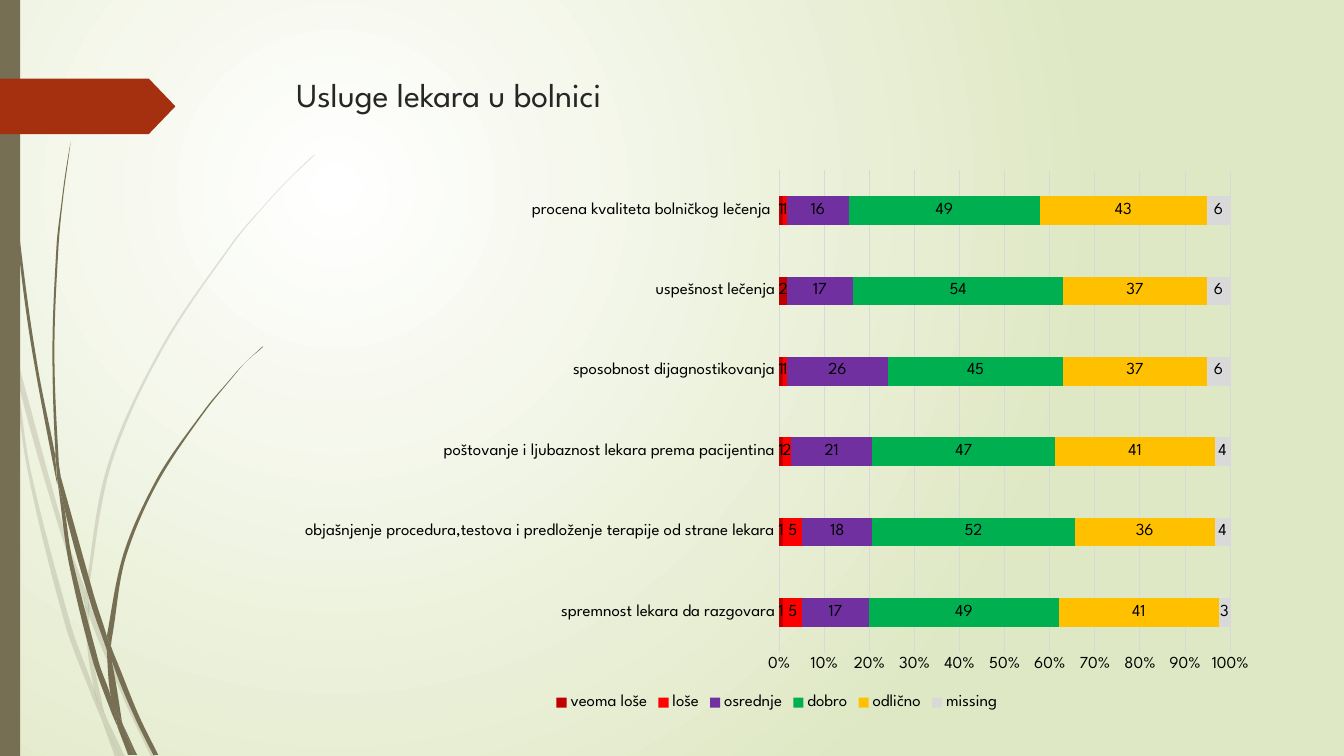
from dataclasses import dataclass
from typing import Any

from lxml import etree
from pptx import Presentation
from pptx import util as u
from pptx.chart.data import CategoryChartData
from pptx.dml.color import RGBColor
from pptx.enum import chart as ch, shapes, text
from pptx.oxml.ns import qn

PX = 9144  # one px is a hundredth of an inch
FONT = "League Spartan"
COLORS = {
    "white": "FFFFFF", "pale green": "DFE8C4", "bark": "766F54", "rust": "A53010",
    "title": "262626", "text": "000000", "grid": "D9D9D9",
}
Point = tuple[int, int]


@dataclass
class Blade:
    """A curved piece of grass, both edges running from top to bottom."""
    left: list[Point]
    right: list[Point]


@dataclass
class Answer:
    name: str
    color: str
    counts: list[int | None]


FAINT_GRASS = [
    Blade([(0, 299), (10, 344), (11, 350)], [(0, 282), (9, 322), (11, 350)]),
    Blade([(14, 345), (17, 376), (58, 522), (84, 599)], [(14, 345), (62, 520), (85, 586)]),
    Blade([(88, 596), (88, 610), (123, 694), (150, 751)],
          [(88, 596), (92, 607), (127, 692), (155, 751)]),
    Blade([(105, 711), (119, 751)], [(105, 711), (124, 751)]),
    Blade([(11, 350), (28, 470), (65, 621), (92, 693), (101, 714)],
          [(11, 350), (17, 376), (31, 469), (70, 619), (93, 683), (99, 707), (101, 714)]),
    Blade([(84, 599), (87, 646), (93, 683), (96, 692), (105, 711)],
          [(84, 599), (88, 608), (88, 610), (91, 646), (103, 706), (105, 711)]),
    Blade([(312, 153), (289, 175), (268, 197), (228, 244), (158, 348), (107, 461),
           (85, 584), (85, 586)],
          [(312, 154), (290, 175), (268, 198), (229, 245), (160, 349), (110, 462),
           (88, 584), (88, 596)]),
    Blade([(101, 714), (114, 751)], [(101, 714), (119, 751)]),
    Blade([(85, 586), (84, 599), (88, 608)], [(85, 586), (88, 596), (88, 610)]),
    Blade([(93, 683), (99, 707), (101, 714), (119, 751)],
          [(93, 683), (96, 692), (105, 711), (119, 751)]),
]
DARK_GRASS = [
    Blade([(3, 0), (4, 48), (7, 110), (17, 233), (33, 355), (56, 477), (57, 481)],
          [(4, 0), (5, 48), (8, 109), (19, 232), (36, 355), (55, 453), (55, 457), (57, 481)]),
    Blade([(60, 472), (64, 505), (88, 592), (106, 645)], [(60, 472), (93, 590), (106, 631)]),
    Blade([(110, 641), (111, 656), (132, 708), (152, 749)],
          [(110, 641), (113, 649), (136, 706), (157, 749)]),
    Blade([(57, 477), (68, 557), (93, 659), (111, 708), (117, 722)],
          [(57, 477), (64, 505), (72, 556), (98, 657), (110, 691), (116, 717), (117, 722)]),
    Blade([(70, 141), (62, 193), (56, 245), (52, 349), (55, 449), (60, 472)],
          [(70, 141), (63, 193), (58, 245), (54, 349), (58, 453), (60, 472)]),
    Blade([(122, 719), (133, 749)], [(122, 719), (136, 749)]),
    Blade([(55, 449), (55, 453), (57, 477), (64, 505)], [(55, 449), (60, 472), (64, 505)]),
    Blade([(260, 344), (245, 358), (231, 373), (204, 405), (156, 474), (122, 551), (106, 631)],
          [(261, 344), (245, 358), (231, 374), (205, 406), (158, 476), (125, 552),
           (111, 633), (110, 641)]),
    Blade([(117, 722), (127, 749)], [(117, 722), (131, 749)]),
    Blade([(106, 645), (110, 691), (116, 706), (122, 719)],
          [(106, 645), (109, 651), (111, 656), (121, 716), (122, 719)]),
    Blade([(106, 631), (106, 645)], [(106, 631), (110, 641), (111, 656)]),
    Blade([(110, 691), (116, 717), (117, 722), (130, 749)],
          [(110, 691), (116, 706), (122, 719), (133, 749)]),
]

QUESTIONS = [
    "spremnost lekara da razgovara",
    "objašnjenje procedura,testova i predloženje terapije od strane lekara",
    "poštovanje i ljubaznost lekara prema pacijentina",
    "sposobnost dijagnostikovanja",
    "uspešnost lečenja",
    "procena kvaliteta bolničkog lečenja ",
]
ANSWERS = [
    Answer("veoma loše", "C00000", [1, 1, 1, 1, 2, 1]),
    Answer("loše", "FF0000", [5, 5, 2, 1, None, 1]),
    Answer("osrednje", "7030A0", [17, 18, 21, 26, 17, 16]),
    Answer("dobro", "00B050", [49, 52, 47, 45, 54, 49]),
    Answer("odlično", "FFC000", [41, 36, 41, 37, 37, 43]),
    Answer("missing", "D9D9D9", [3, 4, 4, 6, 6, 6]),
]


def rgb(name: str) -> RGBColor:
    return RGBColor.from_string(COLORS[name])


def apply(target: Any, values: dict[str, Any]) -> None:
    for key, value in values.items():
        setattr(target, key, value)


def set_font(font: Any, size: int, color: str = "text") -> None:
    apply(font, {"name": FONT, "size": u.Pt(size), "bold": False})
    font.color.rgb = rgb(color)


def paint(shape: Any, color: str, opacity: int = 100) -> None:
    shape.shadow.inherit = False
    shape.line.fill.background()
    shape.fill.solid()
    shape.fill.fore_color.rgb = rgb(color)
    if opacity < 100:
        tone = shape.element.spPr.find(".//" + qn("a:srgbClr"))
        etree.SubElement(tone, qn("a:alpha"), val=str(opacity * 1000))


def bezier_points(edge: list[Point]) -> list[tuple[float, float]]:
    """Two control points and an end for each stretch of the edge."""
    last = len(edge) - 1
    slopes = []
    for i in range(last + 1):
        (xa, ya), (xb, yb) = edge[max(i - 1, 0)], edge[min(i + 1, last)]
        slopes.append((xb - xa) / (yb - ya))
    points = []
    for i in range(last):
        (xa, ya), (xb, yb) = edge[i], edge[i + 1]
        third = (yb - ya) / 3
        points += [(xa + slopes[i] * third, ya + third),
                   (xb - slopes[i + 1] * third, yb - third), (xb, yb)]
    return points


def draw_blade(slide: Any, blade: Blade, opacity: int) -> None:
    upward = blade.right[::-1]
    points = bezier_points(blade.left)
    if upward[0] != blade.left[-1]:
        points += [blade.left[-1], upward[0], upward[0]]
    points += bezier_points(upward)
    builder = slide.shapes.build_freeform(*blade.left[0], scale=PX)
    builder.add_line_segments(points, close=True)
    shape = builder.convert_to_shape()

    # Turn every three points into one curve
    outline = shape.element.find(".//" + qn("a:path"))
    lines = outline.findall(qn("a:lnTo"))
    for first in range(0, len(lines), 3):
        curve = etree.Element(qn("a:cubicBezTo"))
        lines[first].addprevious(curve)
        for line in lines[first:first + 3]:
            curve.append(line[0])
            outline.remove(line)
    paint(shape, "bark", opacity)


def draw_background(slide: Any) -> None:
    fill = slide.background.fill
    fill.gradient()
    for stop, color in zip(fill.gradient_stops, ("white", "pale green")):
        stop.color.rgb = rgb(color)
    gradient = slide.element.find(".//" + qn("a:gradFill"))
    gradient.remove(gradient.find(qn("a:lin")))
    circle = etree.SubElement(gradient, qn("a:path"), {"path": "circle"})
    etree.SubElement(circle, qn("a:fillToRect"),
                     {"l": "50000", "t": "50000", "r": "100000", "b": "100000"})


def draw_title(slide: Any) -> None:
    title = slide.shapes.title
    apply(title, {"left": 284 * PX, "top": 68 * PX, "width": 975 * PX, "height": 59 * PX})
    apply(title.text_frame, {"text": "Usluge lekara u bolnici", "word_wrap": True,
                             "vertical_anchor": text.MSO_ANCHOR.TOP})
    heading = title.text_frame.paragraphs[0]
    heading.alignment = text.PP_ALIGN.LEFT
    set_font(heading.runs[0].font, 24, "title")


def draw_ratings(slide: Any) -> None:
    data = CategoryChartData()
    data.categories = QUESTIONS
    for answer in ANSWERS:
        data.add_series(answer.name, answer.counts)
    ratings = slide.shapes.add_chart(ch.XL_CHART_TYPE.BAR_STACKED_100, 283 * PX, 158 * PX,
                                     975 * PX, 551 * PX, data).chart
    apply(ratings, {"has_title": False, "has_legend": True})
    set_font(ratings.font, 10)
    apply(ratings.legend, {"position": ch.XL_LEGEND_POSITION.BOTTOM, "include_in_layout": False})
    set_font(ratings.legend.font, 12)

    # Bars and their labels
    bars = ratings.plots[0]
    apply(bars, {"gap_width": 182, "overlap": 100, "vary_by_categories": False})
    for series, answer in zip(bars.series, ANSWERS):
        series.format.fill.solid()
        series.format.fill.fore_color.rgb = RGBColor.from_string(answer.color)
        apply(series.data_labels, {"show_value": True, "position": ch.XL_LABEL_POSITION.CENTER})
        set_font(series.data_labels.font, 12)

    # Axes and grid
    questions, share = ratings.category_axis, ratings.value_axis
    for axis in (questions, share):
        apply(axis, {"major_tick_mark": ch.XL_TICK_MARK.NONE,
                     "minor_tick_mark": ch.XL_TICK_MARK.NONE})
        set_font(axis.tick_labels.font, 12)
    share.has_major_gridlines = True
    apply(share.tick_labels, {"number_format": "0%", "number_format_is_linked": False})
    share.format.line.fill.background()
    for line in (questions.format.line, share.major_gridlines.format.line):
        line.color.rgb = rgb("grid")
        line.width = u.Pt(0.75)


def main() -> None:
    deck = Presentation()
    apply(deck, {"slide_width": 1333 * PX, "slide_height": 750 * PX})
    slide = deck.slides.add_slide(deck.slide_layouts[5])
    draw_background(slide)

    # Decoration on the left
    for grass, opacity in ((FAINT_GRASS, 20), (DARK_GRASS, 100)):
        for blade in grass:
            draw_blade(slide, blade, opacity)
    side_bar = slide.shapes.add_shape(shapes.MSO_SHAPE.RECTANGLE, 0, 0, 20 * PX, 750 * PX)
    paint(side_bar, "bark")
    ribbon = slide.shapes.add_shape(shapes.MSO_SHAPE.PENTAGON, 0, 78 * PX, 174 * PX, 55 * PX)
    ribbon.adjustments[0] = 0.48
    paint(ribbon, "rust")

    # Content
    draw_title(slide)
    draw_ratings(slide)
    deck.save("out.pptx")


if __name__ == "__main__":
    main()
